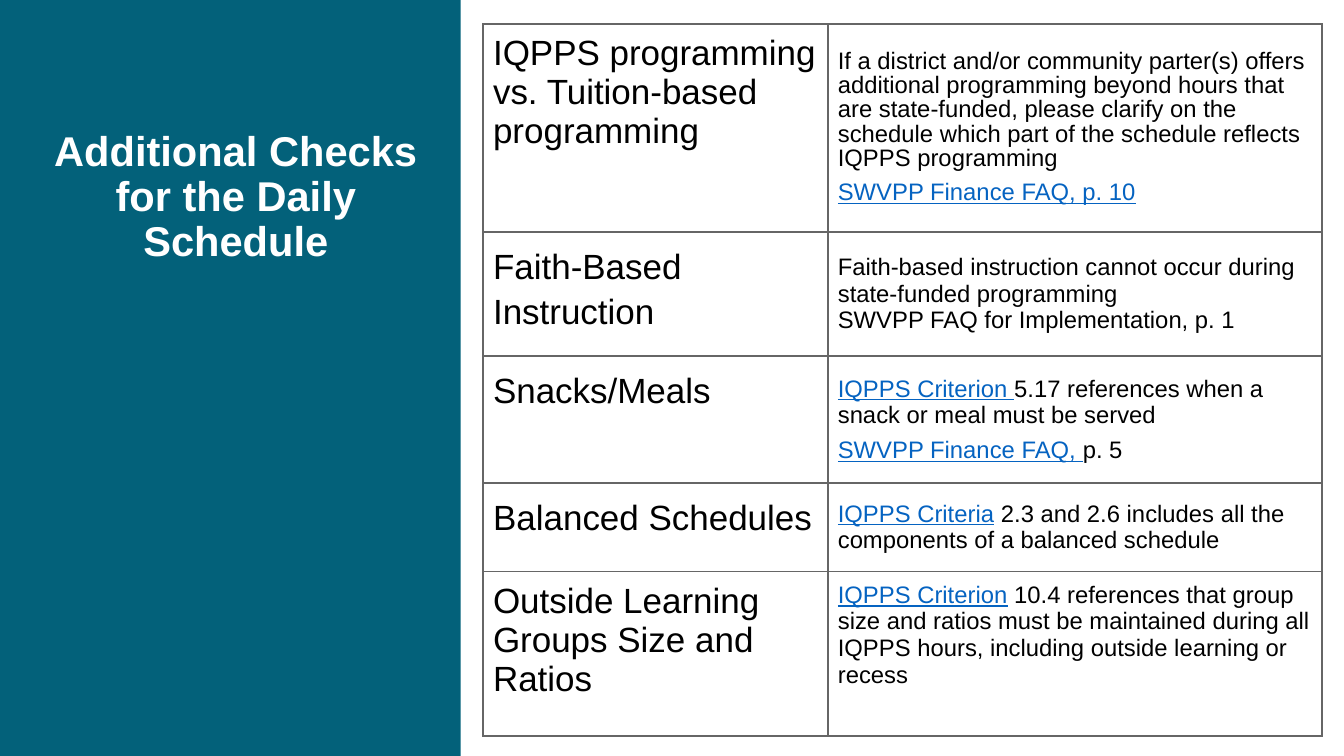
import pptx
import pptx.util
import pptx.dml.color
import pptx.enum.shapes
import pptx.enum.text
import pptx.oxml
import pptx.oxml.ns

Inches = pptx.util.Inches
Pt = pptx.util.Pt
Anchor = pptx.enum.text.MSO_ANCHOR

COLORS = {
    "teal": "03617A",
    "white": "FFFFFF",
    "black": "000000",
    "link": "0563C1",
    "border": "666666",
}


def style_run(span, size, color, bold=False, underline=False):
    span.font.name = "Arial"
    span.font.size = Pt(size)
    span.font.bold = bold
    span.font.underline = underline
    span.font.color.rgb = pptx.dml.color.RGBColor.from_string(COLORS[color])


def add_borders(cell):
    properties = cell._tc.get_or_add_tcPr()
    for position, side in enumerate(("lnL", "lnR", "lnT", "lnB")):
        line = pptx.oxml.parse_xml(
            f'<a:{side} {pptx.oxml.ns.nsdecls("a")} w="{Pt(1.5)}"><a:solidFill>'
            f'<a:srgbClr val="{COLORS["border"]}"/></a:solidFill></a:{side}>'
        )
        properties.insert(position, line)


deck = pptx.Presentation()
deck.slide_width = Inches(13.33)
deck.slide_height = Inches(7.5)
page = deck.slides.add_slide(deck.slide_layouts[6])

panel = page.shapes.add_shape(
    pptx.enum.shapes.MSO_SHAPE.RECTANGLE, 0, 0, Inches(4.57), Inches(7.5)
)
panel.shadow.inherit = False
panel.fill.solid()
panel.fill.fore_color.rgb = pptx.dml.color.RGBColor.from_string(COLORS["teal"])
panel.line.fill.background()

title_box = page.shapes.add_textbox(Inches(0.29), Inches(1.46), Inches(4.1), Inches(1.01))
title_box.text_frame.word_wrap = True
title_box.text_frame.vertical_anchor = Anchor.MIDDLE
title_box.text_frame.text = "Additional Checks for the Daily Schedule"
title_para = title_box.text_frame.paragraphs[0]
title_para.alignment = pptx.enum.text.PP_ALIGN.CENTER
title_para.line_spacing = 0.9
style_run(title_para.runs[0], 29.7, "white", bold=True)

# Each check: row height, heading, heading spacing, detail anchor,
# detail paragraphs as (line spacing, points before, link text, plain text).
checks = [
    (2.06, "IQPPS programming vs. Tuition-based programming", 1.0, Anchor.MIDDLE, [
        (0.9, 0, "", "If a district and/or community parter(s) offers additional "
         "programming beyond hours that are state-funded, please clarify on the "
         "schedule which part of the schedule reflects IQPPS programming"),
        (0.9, 7.5, "SWVPP Finance FAQ, p. 10", ""),
    ]),
    (1.23, "Faith-Based Instruction", 1.15, Anchor.MIDDLE, [
        (1.0, 0, "", "Faith-based instruction cannot occur during state-funded programming"),
        (1.0, 0, "", "SWVPP FAQ for Implementation, p. 1"),
    ]),
    (1.26, "Snacks/Meals", 1.15, Anchor.MIDDLE, [
        (1.0, 0, "IQPPS Criterion ", "5.17 references when a snack or meal must be served"),
        (0.9, 7.5, "SWVPP Finance FAQ, ", "p. 5"),
    ]),
    (0.88, "Balanced Schedules", 1.15, Anchor.MIDDLE, [
        (1.0, 0, "IQPPS Criteria",
         " 2.3 and 2.6 includes all the components of a balanced schedule"),
    ]),
    (1.63, "Outside Learning Groups Size and Ratios", 1.0, Anchor.TOP, [
        (1.0, 0, "IQPPS Criterion",
         " 10.4 references that group size and ratios must be maintained during "
         "all IQPPS hours, including outside learning or recess"),
    ]),
]

column_widths = (3.42, 4.9)
table = page.shapes.add_table(
    len(checks), len(column_widths), Inches(4.79), Inches(0.24),
    Inches(sum(column_widths)), Inches(sum(check[0] for check in checks)),
).table
table.first_row = False
table.horz_banding = False
for column, width in zip(table.columns, column_widths):
    column.width = Inches(width)

for index, (height, heading, heading_spacing, anchor, details) in enumerate(checks):
    table.rows[index].height = Inches(height)
    heading_cell, detail_cell = table.cell(index, 0), table.cell(index, 1)
    for cell in (heading_cell, detail_cell):
        cell.margin_left = cell.margin_right = Inches(0.1)
        cell.margin_top = cell.margin_bottom = Inches(0.1)
        cell.fill.background()
        add_borders(cell)

    heading_cell.text_frame.text = heading
    heading_para = heading_cell.text_frame.paragraphs[0]
    heading_para.line_spacing = heading_spacing
    style_run(heading_para.runs[0], 25, "black")

    detail_cell.vertical_anchor = anchor
    frame = detail_cell.text_frame
    for number, (spacing, before, link, plain) in enumerate(details):
        para = frame.add_paragraph() if number else frame.paragraphs[0]
        para.line_spacing = spacing
        para.space_before = Pt(before)
        for words, color in ((link, "link"), (plain, "black")):
            if words:
                span = para.add_run()
                span.text = words
                style_run(span, 17, color, underline=color == "link")

deck.save("out.pptx")
